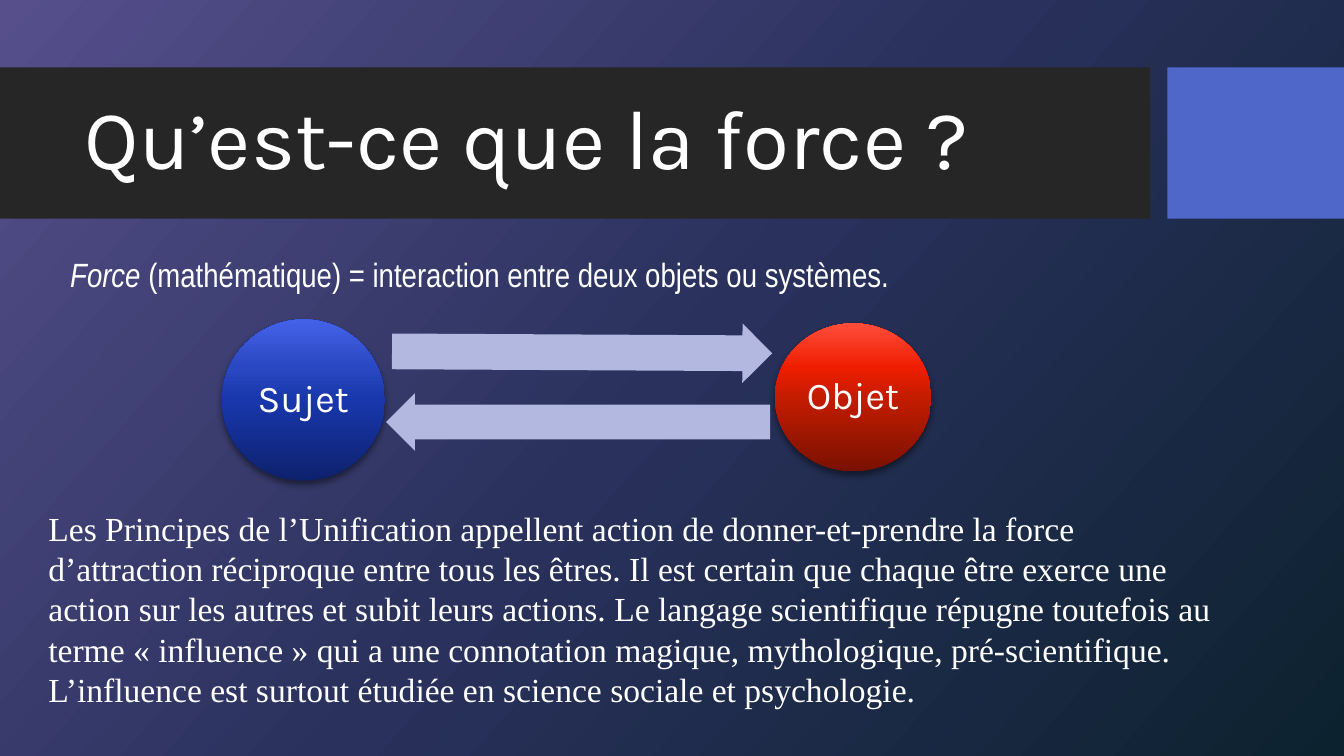
import pptx
import pptx.util
import pptx.dml.color
import pptx.enum.shapes
import pptx.enum.text
import pptx.oxml
import pptx.oxml.ns
import lxml.etree

Cm = pptx.util.Cm
Pt = pptx.util.Pt
RGBColor = pptx.dml.color.RGBColor
SHAPE = pptx.enum.shapes.MSO_SHAPE
ALIGN = pptx.enum.text.PP_ALIGN
ANCHOR = pptx.enum.text.MSO_ANCHOR
qn = pptx.oxml.ns.qn

WHITE = RGBColor(0xFF, 0xFF, 0xFF)
BAND = RGBColor(0x26, 0x26, 0x26)
ACCENT = RGBColor(0x4E, 0x67, 0xC8)
ARROW = RGBColor(0xB2, 0xB8, 0xE0)
NIGHT = [
    (0, RGBColor(0x56, 0x4F, 0x8C)),
    (50, RGBColor(0x29, 0x31, 0x5C)),
    (100, RGBColor(0x0D, 0x22, 0x2F)),
]
RED = [
    (0, RGBColor(0x79, 0x11, 0x00)),
    (50, RGBColor(0xC4, 0x1C, 0x00)),
    (70, RGBColor(0xEF, 0x1D, 0x00)),
    (100, RGBColor(0xFF, 0x4D, 0x3B)),
]
BLUE = [
    (0, RGBColor(0x0D, 0x21, 0x6D)),
    (50, RGBColor(0x19, 0x37, 0xAC)),
    (70, RGBColor(0x2A, 0x48, 0xC1)),
    (100, RGBColor(0x44, 0x62, 0xE8)),
]

DEFINITION = [
    ("Force", True),
    (" (mathématique) = interaction entre deux objets ou systèmes.", False),
]
EXPLANATION = (
    "Les Principes de l’Unification appellent action de donner-et-prendre la force "
    "d’attraction réciproque entre tous les êtres. Il est certain que chaque être "
    "exerce une action sur les autres et subit leurs actions. Le langage scientifique "
    "répugne toutefois au terme « influence » qui a une connotation magique, "
    "mythologique, pré-scientifique. L’influence est surtout étudiée en science "
    "sociale et psychologie."
)


def set_gradient(fill, owner, stops, angle):
    """Give the fill of the owner element these stops, at a clockwise angle in degrees."""
    fill.gradient()
    gradient = next(owner.iter(qn("a:gradFill")))
    stop_list = gradient.find(qn("a:gsLst"))
    for stop in list(stop_list):
        stop_list.remove(stop)
    for percent, color in stops:
        stop = lxml.etree.SubElement(stop_list, qn("a:gs"), pos=str(percent * 1000))
        lxml.etree.SubElement(stop, qn("a:srgbClr"), val=str(color))
    gradient.find(qn("a:lin")).set("ang", str(angle * 60000))


def add_soft_shadow(shape):
    effects = shape.element.spPr.find(qn("a:effectLst"))
    shadow = lxml.etree.SubElement(
        effects, qn("a:outerShdw"), blurRad=str(Pt(5)), dist=str(Pt(3)),
        dir="5400000", rotWithShape="0")
    color = lxml.etree.SubElement(shadow, qn("a:srgbClr"), val="000000")
    lxml.etree.SubElement(color, qn("a:alpha"), val="45000")


def add_plain_shape(slide, kind, left, top, width, height, color=None):
    shape = slide.shapes.add_shape(kind, Cm(left), Cm(top), Cm(width), Cm(height))
    shape.shadow.inherit = False
    shape.line.fill.background()
    if color is not None:
        shape.fill.solid()
        shape.fill.fore_color.rgb = color
    return shape


def format_text(para, font_name, size, align=ALIGN.LEFT, line_spacing=0.9):
    para.alignment = align
    para.line_spacing = line_spacing
    for span in para.runs:
        span.font.name = font_name
        span.font.size = Pt(size)
        span.font.color.rgb = WHITE


def add_header(slide, top, height, page_width):
    band_width, accent_width = 28.98, 4.45
    add_plain_shape(slide, SHAPE.RECTANGLE, 0, top, band_width, height, BAND)
    add_plain_shape(slide, SHAPE.RECTANGLE, page_width - accent_width, top,
                    accent_width, height, ACCENT)
    title = slide.shapes.title
    title.element.getparent().append(title.element)  # bring in front of the band
    title.left, title.top = Cm(1.88), Cm(top + 0.38)
    title.width, title.height = Cm(26.7), Cm(3)
    frame = title.text_frame
    frame.text = "Qu’est-ce que la force ?"
    frame.vertical_anchor = ANCHOR.MIDDLE
    format_text(frame.paragraphs[0], "Karla", 60)


def add_text_box(slide, left, top, width, height):
    box = slide.shapes.add_textbox(Cm(left), Cm(top), Cm(width), Cm(height))
    box.text_frame.word_wrap = True
    return box.text_frame


def add_definition(slide, left, top, width, height):
    para = add_text_box(slide, left, top, width, height).paragraphs[0]
    for text, italic in DEFINITION:
        span = para.add_run()
        span.text = text
        span.font.italic = italic
    format_text(para, "Arial Narrow", 24)


def add_explanation(slide, left, top, width, height):
    frame = add_text_box(slide, left, top, width, height)
    frame.text = EXPLANATION
    format_text(frame.paragraphs[0], "Times New Roman", 24, line_spacing=1.0)


def add_ball(slide, label, stops, left, top, width, height):
    ball = add_plain_shape(slide, SHAPE.OVAL, left, top, width, height)
    set_gradient(ball.fill, ball.element.spPr, stops, 270)
    add_soft_shadow(ball)
    frame = ball.text_frame
    frame.word_wrap = True
    frame.vertical_anchor = ANCHOR.MIDDLE
    frame.margin_left = frame.margin_right = Cm(0.1)
    frame.margin_top = frame.margin_bottom = Cm(0.1)
    frame.text = label
    format_text(frame.paragraphs[0], "Karla", 27, ALIGN.CENTER)


def add_block_arrow(slide, kind, left, top, width, height, rotation=0):
    arrow = add_plain_shape(slide, kind, left, top, width, height, ARROW)
    arrow.adjustments[0], arrow.adjustments[1] = 0.6, 0.5
    arrow.rotation = rotation


def add_exchange(slide, left, top):
    """Draw subject and object with an arrow each way between them."""
    add_ball(slide, "Objet", RED, left + 13.94, top + 0.1, 3.94, 3.73)
    add_block_arrow(slide, SHAPE.RIGHT_ARROW, left + 4.29, top + 0.08, 9.58, 1.5, 0.3)
    add_ball(slide, "Sujet", BLUE, left, top, 4.11, 4.06)
    add_block_arrow(slide, SHAPE.LEFT_ARROW, left + 4.14, top + 1.86, 9.68, 1.45)


def main():
    page_width, page_height = 33.87, 19.05
    deck = pptx.Presentation()
    deck.slide_width, deck.slide_height = Cm(page_width), Cm(page_height)
    slide = deck.slides.add_slide(deck.slide_layouts[5])
    set_gradient(slide.background.fill, slide.element, NIGHT, 42)
    add_header(slide, 1.7, 3.81, page_width)
    add_definition(slide, 1.52, 6.38, 27.43, 1.8)
    add_exchange(slide, 5.59, 8.05)
    add_explanation(slide, 0.97, 12.67, 29.87, 5.38)
    deck.save("out.pptx")


if __name__ == "__main__":
    main()
